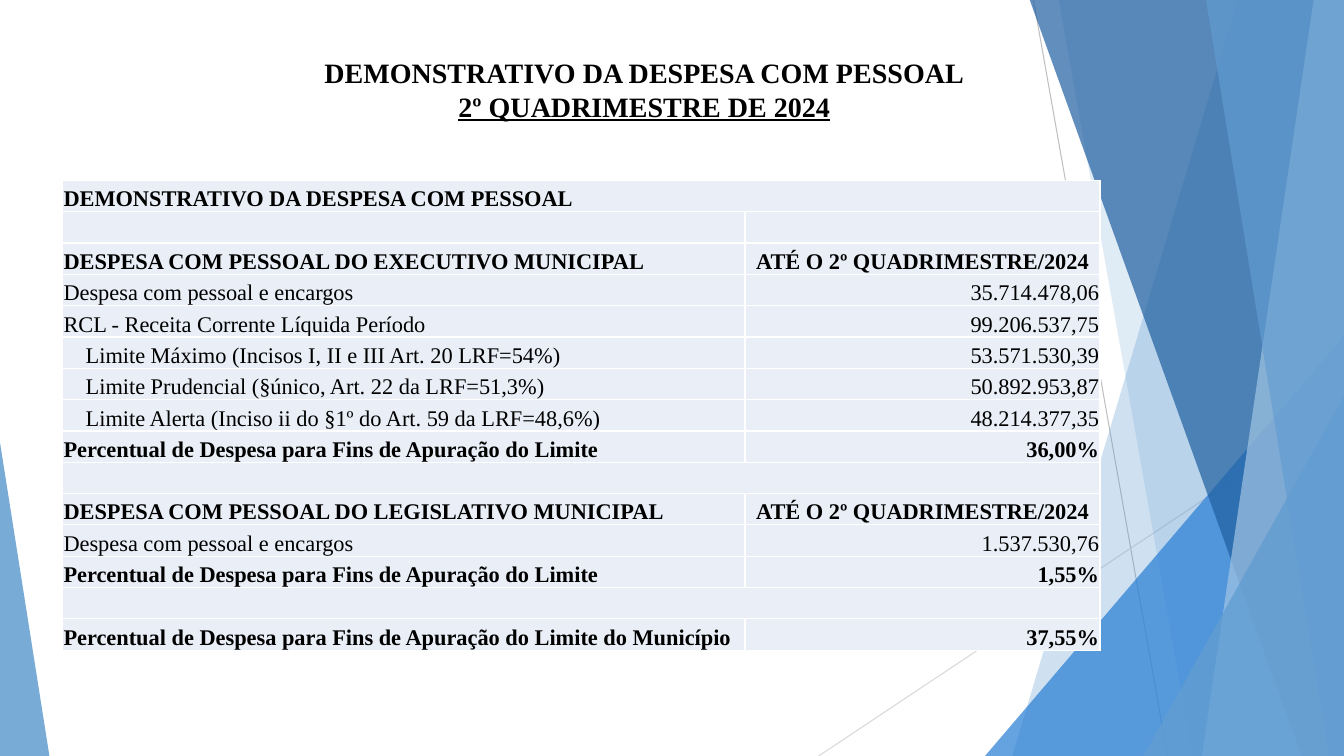
from lxml.etree import SubElement
from pptx import Presentation
from pptx.dml.color import RGBColor
from pptx.enum.shapes import MSO_CONNECTOR, MSO_SHAPE
from pptx.enum.text import MSO_ANCHOR, PP_ALIGN
from pptx.oxml import parse_xml
from pptx.oxml.ns import nsdecls, qn
from pptx.util import Inches, Pt

WIDTH, HEIGHT, TOP = 13.33, 7.5, -0.01
PERIOD = "ATÉ O 2º QUADRIMESTRE/2024"
EXPENSE = "Despesa com pessoal e encargos"
SHARE = "Percentual de Despesa para Fins de Apuração do Limite"

# kind, label, value
ROWS = [
    ("merged", "DEMONSTRATIVO DA DESPESA COM PESSOAL", ""),
    ("plain", "", ""),
    ("heading", "DESPESA COM PESSOAL DO EXECUTIVO MUNICIPAL", PERIOD),
    ("plain", EXPENSE, "35.714.478,06"),
    ("plain", "RCL - Receita Corrente Líquida Período", "99.206.537,75"),
    ("limit", "Limite Máximo (Incisos I, II e III Art. 20 LRF=54%)", "53.571.530,39"),
    ("limit", "Limite Prudencial (§único, Art. 22 da LRF=51,3%)", "50.892.953,87"),
    ("limit", "Limite Alerta (Inciso ii do §1º do Art. 59 da LRF=48,6%)", "48.214.377,35"),
    ("total", SHARE, "36,00%"),
    ("merged", "", ""),
    ("heading", "DESPESA COM PESSOAL DO LEGISLATIVO MUNICIPAL", PERIOD),
    ("plain", EXPENSE, "1.537.530,76"),
    ("total", SHARE, "1,55%"),
    ("merged", "", ""),
    ("total", SHARE + " do Município", "37,55%"),
]


def color(value):
    return RGBColor.from_string(value)


class SlideBuilder:
    font, ink, cell_fill, border = "Times New Roman", "000000", "EAEFF7", "FFFFFF"

    def __init__(self, presentation):
        self.slide = presentation.slides.add_slide(presentation.slide_layouts[5])
        self.shapes = self.slide.shapes

    def format_run(self, run, size, bold, underline=None):
        run.font.name = self.font
        run.font.size = Pt(size)
        run.font.bold = bold
        run.font.underline = underline
        run.font.color.rgb = color(self.ink)

    def line(self, start, end, line_color):
        ends = [Inches(value) for value in (*start, *end)]
        connector = self.shapes.add_connector(MSO_CONNECTOR.STRAIGHT, *ends)
        connector.line.color.rgb = color(line_color)
        connector.line.width = Pt(0.75)
        SubElement(connector._element.spPr, qn("a:effectLst"))

    def paint(self, shape, fill, opacity):
        shape.shadow.inherit = False
        shape.fill.solid()
        shape.fill.fore_color.rgb = color(fill)
        tint = shape._element.spPr.find(qn("a:solidFill"))[0]
        SubElement(tint, qn("a:alpha")).set("val", str(opacity * 1000))
        shape.line.fill.background()

    def band(self, top_left, bottom_left, fill, opacity):
        corners = [(top_left, TOP), (WIDTH, TOP), (WIDTH, HEIGHT), (bottom_left, HEIGHT)]
        points = [(Inches(x), Inches(y)) for x, y in corners]
        outline = self.shapes.build_freeform(*points[0], scale=1.0)
        outline.add_line_segments(points[1:], close=True)
        self.paint(outline.convert_to_shape(), fill, opacity)

    def triangle(self, left, top, width, apex, fill, opacity):
        box = [Inches(value) for value in (left, top, width, HEIGHT - top)]
        triangle = self.shapes.add_shape(MSO_SHAPE.ISOSCELES_TRIANGLE, *box)
        triangle.adjustments[0] = apex
        self.paint(triangle, fill, opacity)

    def title(self, heading, period):
        title = self.shapes.title
        title.left, title.top = Inches(1.69), Inches(0.5)
        title.width, title.height = Inches(9.4), Inches(1.44)
        frame = title.text_frame
        frame.word_wrap = True
        frame.vertical_anchor = MSO_ANCHOR.TOP
        frame.text = f"{heading}\v{period}"
        paragraph = frame.paragraphs[0]
        paragraph.alignment = PP_ALIGN.CENTER
        for run, underline in zip(paragraph.runs, (False, True)):
            self.format_run(run, 20, True, underline)
        self.shapes._spTree.append(title._element)

    def cell(self, cell, text, bold, align, indent=0):
        cell.fill.solid()
        cell.fill.fore_color.rgb = color(self.cell_fill)
        cell.vertical_anchor = MSO_ANCHOR.BOTTOM
        cell.margin_left = Inches(0.01 + indent)
        cell.margin_right = cell.margin_top = Inches(0.01)
        cell.margin_bottom = 0
        properties = cell._tc.get_or_add_tcPr()
        for position, side in enumerate("LRTB"):
            properties.insert(position, parse_xml(
                f'<a:ln{side} {nsdecls("a")} w="12700"><a:solidFill>'
                f'<a:srgbClr val="{self.border}"/></a:solidFill></a:ln{side}>'))
        cell.text_frame.text = text
        paragraph = cell.text_frame.paragraphs[0]
        paragraph.alignment = align
        for run in paragraph.runs:
            self.format_run(run, 16, bold)
        if not text:
            paragraph._p.get_or_add_endParaRPr().set("sz", "1600")

    def expense_table(self, rows):
        box = [Inches(value) for value in (0.62, 1.79, 10.29, 4.66)]
        table = self.shapes.add_table(len(rows), 2, *box).table
        table.first_row = table.horz_banding = False
        for column, width in zip(table.columns, (6.77, 3.52)):
            column.width = Inches(width)
        for index, (kind, label, value) in enumerate(rows):
            table.rows[index].height = Inches(4.66 / len(rows))
            bold = kind in ("merged", "heading", "total")
            value_align = PP_ALIGN.CENTER if kind == "heading" else PP_ALIGN.RIGHT
            label_cell, value_cell = table.cell(index, 0), table.cell(index, 1)
            indent = 0.22 if kind == "limit" else 0
            self.cell(label_cell, label, bold, PP_ALIGN.LEFT, indent)
            self.cell(value_cell, value, bold, value_align)
            if kind == "merged":
                label_cell.merge(value_cell)


def main():
    presentation = Presentation()
    presentation.slide_width = Inches(WIDTH)
    presentation.slide_height = Inches(HEIGHT)
    builder = SlideBuilder(presentation)
    builder.line((10.25, 0), (11.58, HEIGHT), "BFBFBF")
    builder.line((WIDTH, 4.03), (8.12, HEIGHT), "D9D9D9")
    builder.band(12.28, 10.04, "629DD1", 30)
    builder.band(10.5, 11.83, "629DD1", 20)
    builder.triangle(9.77, 3.33, 3.56, 1, "297FD5", 72)
    builder.band(10.21, 12.91, "1F5FA0", 70)
    builder.band(13.03, 11.92, "A1C4E3", 70)
    builder.band(11.96, 13.18, "629DD1", 65)
    builder.triangle(11.34, 3.93, 1.99, 1, "629DD1", 80)
    builder.triangle(0, 4.39, 0.49, 0, "629DD1", 85)
    builder.title("DEMONSTRATIVO DA DESPESA COM PESSOAL", "2º QUADRIMESTRE DE 2024")
    builder.expense_table(ROWS)
    presentation.save("out.pptx")


if __name__ == "__main__":
    main()
